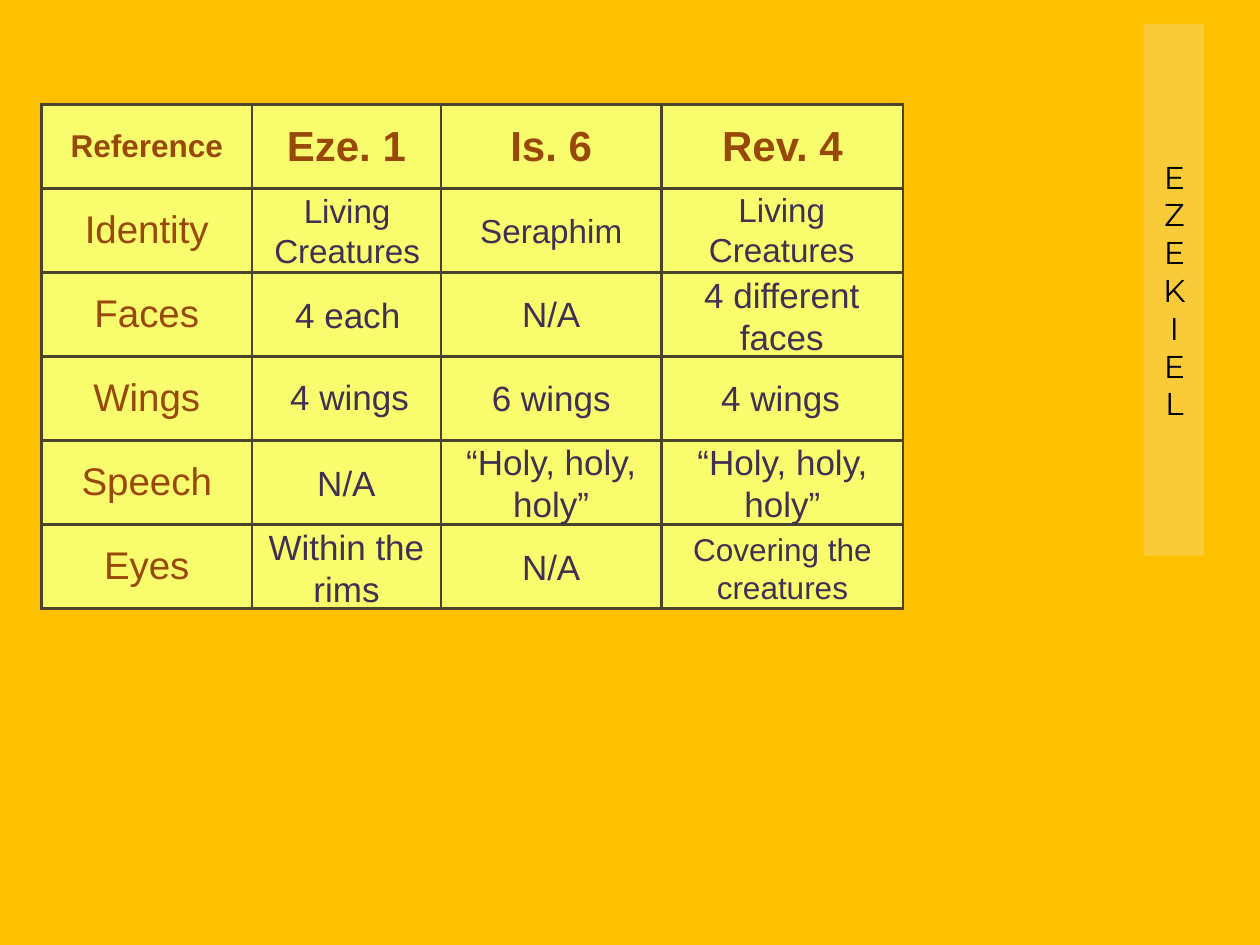
from dataclasses import dataclass

from lxml import etree
from pptx import Presentation
from pptx import util as u
from pptx.dml import color
from pptx.enum import shapes, text
from pptx.oxml import ns


@dataclass(frozen=True)
class Theme:
    background: str = "FFC000"
    cell: str = "F9FC6C"
    border: str = "4A452A"
    heading: str = "984807"
    body: str = "403152"
    band: str = "EEECE1"
    band_text: str = "000000"
    font: str = "Arial"
    band_font: str = "Montserrat"
    corner_size: int = 18
    column_size: int = 24
    row_size: int = 22
    band_size: int = 18
    border_width: float = 1.5


class ComparisonSlide:
    """Builds the parts of a Bible comparison slide in one style."""

    def __init__(self, deck, theme):
        self.theme = theme
        self.slide = deck.slides.add_slide(deck.slide_layouts[6])
        self.paint(self.slide.background.fill, theme.background)

    def paint(self, fill, shade):
        fill.solid()
        fill.fore_color.rgb = color.RGBColor.from_string(shade)

    def add_words(self, frame, words, shade, **formats):
        paragraph = frame.paragraphs[0]
        paragraph.alignment = text.PP_ALIGN.CENTER
        run = paragraph.add_run()
        run.text = words
        for name, value in formats.items():
            setattr(run.font, name, value)
        run.font.color.rgb = color.RGBColor.from_string(shade)
        return run

    def book_band(self, book, left, top, width, height):
        theme = self.theme
        band = self.slide.shapes.add_shape(
            shapes.MSO_SHAPE.RECTANGLE, *map(u.Inches, (left, top, width, height)))
        band.shadow.inherit = False
        band.line.fill.background()
        self.paint(band.fill, theme.band)
        shade = band.fill._xPr.find(".//" + ns.qn("a:srgbClr"))
        etree.SubElement(shade, ns.qn("a:alpha")).set("val", "25000")
        frame = band.text_frame
        settings = {
            "margin_left": u.Inches(0.03), "margin_right": u.Inches(0.03),
            "word_wrap": True, "vertical_anchor": text.MSO_ANCHOR.TOP,
            "auto_size": text.MSO_AUTO_SIZE.SHAPE_TO_FIT_TEXT,
        }
        for name, value in settings.items():
            setattr(frame, name, value)
        frame._txBody.bodyPr.set("vert", "wordArtVert")
        run = self.add_words(frame, book, theme.band_text,
                             name=theme.band_font, size=u.Pt(theme.band_size))
        run.font._element.set("spc", "1000")

    def border(self, cell):
        properties = cell._tc.get_or_add_tcPr()
        for position, side in enumerate(("lnL", "lnR", "lnT", "lnB")):
            line = etree.Element(ns.qn(f"a:{side}"),
                                 w=str(u.Pt(self.theme.border_width)))
            fill = etree.SubElement(line, ns.qn("a:solidFill"))
            etree.SubElement(fill, ns.qn("a:srgbClr"), val=self.theme.border)
            properties.insert(position, line)

    def grid(self, references, topics, left, top, widths, row_height):
        theme = self.theme
        rows, columns = len(topics) + 1, len(references)
        table = self.slide.shapes.add_table(
            rows, columns, u.Inches(left), u.Inches(top),
            u.Inches(sum(widths)), u.Inches(row_height * rows)).table
        for column, width in zip(table.columns, widths):
            column.width = u.Inches(width)
        for row in table.rows:
            row.height = u.Inches(row_height)
        for cell in table.iter_cells():
            self.paint(cell.fill, theme.cell)
            self.border(cell)
            cell.vertical_anchor = text.MSO_ANCHOR.MIDDLE
        for index, reference in enumerate(references):
            size = theme.column_size if index else theme.corner_size
            self.add_words(table.cell(0, index).text_frame, reference, theme.heading,
                           name=theme.font, size=u.Pt(size), bold=True)
        for index, topic in enumerate(topics, start=1):
            self.add_words(table.cell(index, 0).text_frame, topic, theme.heading,
                           name=theme.font, size=u.Pt(theme.row_size), bold=False)

    def answer(self, words, left, top, width, size=20, lines=1):
        height = 0.1 + lines * size / 60
        box = self.slide.shapes.add_textbox(
            *map(u.Inches, (left, top, width, height)))
        box.text_frame.word_wrap = True
        box.text_frame.auto_size = text.MSO_AUTO_SIZE.SHAPE_TO_FIT_TEXT
        self.add_words(box.text_frame, words, self.theme.body,
                       name=self.theme.font, size=u.Pt(size))


ANSWERS = [
    ("Living Creatures", 1.92, 1.46, 1.67, 19, 2),
    ("Seraphim", 3.5, 1.62, 1.75, 19),
    ("Living Creatures", 5.37, 1.45, 1.67, 19, 2),
    ("4 each", 2.02, 2.28, 1.48),
    ("N/A", 3.5, 2.27, 1.75),
    ("4 different faces", 5.22, 2.12, 1.97, 20, 2),
    ("4 wings", 2.05, 2.93, 1.45),
    ("6 wings", 3.5, 2.94, 1.75),
    ("4 wings", 5.36, 2.94, 1.67),
    ("N/A", 2, 3.61, 1.5),
    ("“Holy, holy, holy”", 3.46, 3.45, 1.83, 20, 2),
    ("“Holy, holy, holy”", 5.25, 3.45, 1.92, 20, 2),
    ("Within the rims", 2, 4.12, 1.5, 20, 2),
    ("N/A", 3.5, 4.28, 1.75),
    ("Covering the creatures", 5.25, 4.16, 1.92, 18, 2),
]


def main():
    deck = Presentation()
    deck.slide_width, deck.slide_height = u.Inches(10), u.Inches(7.5)
    creatures = ComparisonSlide(deck, Theme())
    creatures.book_band("EZEKIEL", 9.08, 0.19, 0.48, 4.22)
    creatures.grid(
        ["Reference", "Eze. 1", "Is. 6", "Rev. 4"],
        ["Identity", "Faces", "Wings", "Speech", "Eyes"],
        0.33, 0.83, [1.67, 1.5, 1.75, 1.92], 4 / 6)
    for entry in ANSWERS:
        creatures.answer(*entry)
    deck.save("out.pptx")


if __name__ == "__main__":
    main()
